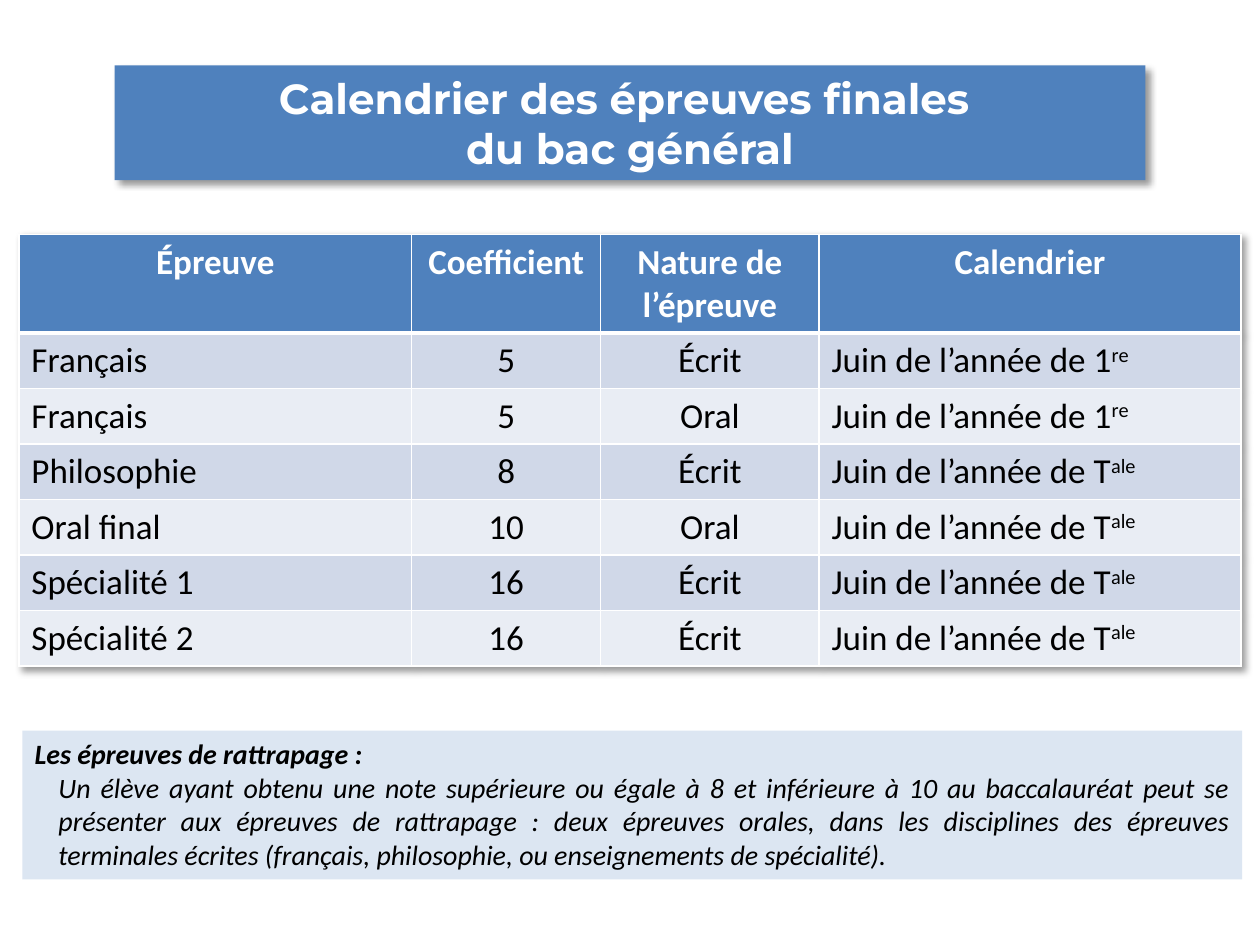
"""Build the slide on the final exams of the general baccalaureate."""
import pptx
import pptx.dml.color
import pptx.enum.text
import pptx.oxml
import pptx.oxml.ns
import pptx.util

Cm = pptx.util.Cm
Pt = pptx.util.Pt
ALIGN = pptx.enum.text.PP_ALIGN

THEME = {
    "blue": "4F81BD", "bands": ("D0D8E8", "E9EDF4"), "pale": "DCE6F2",
    "white": "FFFFFF", "black": "000000",
    "head": "Montserrat", "body": "Calibri",
    "title": 24, "cell": 20, "note": 16,
}
TITLE = "Calendrier des épreuves finales \ndu bac général"
HEADS = ("Épreuve", "Coefficient", "Nature de l’épreuve", "Calendrier")
EXAMS = (
    ("Français", "5", "Écrit", "1", "re"),
    ("Français", "5", "Oral", "1", "re"),
    ("Philosophie", "8", "Écrit", "T", "ale"),
    ("Oral final", "10", "Oral", "T", "ale"),
    ("Spécialité 1", "16", "Écrit", "T", "ale"),
    ("Spécialité 2", "16", "Écrit", "T", "ale"),
)
DATE = "Juin de l’année de "
WIDTHS = (7.92, 3.81, 4.4, 8.51)
HEAD_H, ROW_H = 1.92, 1.1
NOTE = (
    "Les épreuves de rattrapage :",
    "Un élève ayant obtenu une note supérieure ou égale à 8 et inférieure à 10 "
    "au baccalauréat peut se présenter aux épreuves de rattrapage : deux épreuves "
    "orales, dans les disciplines des épreuves terminales écrites (français, "
    "philosophie, ou enseignements de spécialité).",
)


def rgb(name):
    return pptx.dml.color.RGBColor.from_string(name)


def paint(item, color):
    item.fill.solid()
    item.fill.fore_color.rgb = rgb(color)


def style(para, face, size, color, align, bold=False, slant=False):
    para.alignment = align
    for run in para.runs:
        font = run.font
        font.name, font.size = face, Pt(size)
        font.bold, font.italic = bold, slant
        font.color.rgb = rgb(color)


def shadow():
    return pptx.oxml.parse_xml(
        f'<a:effectLst {pptx.oxml.ns.nsdecls("a")}>'
        f'<a:outerShdw blurRad="{Pt(4)}" dist="{Pt(3)}" dir="2700000" '
        f'algn="tl" rotWithShape="0"><a:srgbClr val="{THEME["black"]}">'
        '<a:alpha val="40000"/></a:srgbClr></a:outerShdw></a:effectLst>')


def edge(cell, top, bottom):
    sides = (("L", 1), ("R", 1), ("T", top), ("B", bottom))
    props = cell._tc.get_or_add_tcPr()
    for spot, (side, width) in enumerate(sides):
        props.insert(spot, pptx.oxml.parse_xml(
            f'<a:ln{side} {pptx.oxml.ns.nsdecls("a")} w="{Pt(width)}">'
            f'<a:solidFill><a:srgbClr val="{THEME["white"]}"/></a:solidFill>'
            f'</a:ln{side}>'))


def add_title(slide):
    title = slide.shapes.title
    title.left, title.top, title.width, title.height = map(Cm, (2.31, 1.32, 20.78, 2.31))
    paint(title, THEME["blue"])
    title._element.spPr.append(shadow())
    frame = title.text_frame
    frame.text = TITLE
    frame.auto_size = pptx.enum.text.MSO_AUTO_SIZE.NONE
    for para in frame.paragraphs:
        style(para, THEME["head"], THEME["title"], THEME["white"], ALIGN.CENTER, True)


def add_grid(slide):
    height = HEAD_H + ROW_H * len(EXAMS)
    grid = slide.shapes.add_table(
        len(EXAMS) + 1, len(HEADS), Cm(0.38), Cm(4.73), Cm(sum(WIDTHS)), Cm(height)).table
    grid._tbl.tblPr.insert(0, shadow())
    for col, width in zip(grid.columns, WIDTHS):
        col.width = Cm(width)
    rows = [HEADS] + [(*exam[:3], DATE + exam[3]) for exam in EXAMS]
    for r, row in enumerate(rows):
        head = r == 0
        grid.rows[r].height = Cm(HEAD_H if head else ROW_H)
        for c, text in enumerate(row):
            cell = grid.cell(r, c)
            cell.text = text
            para = cell.text_frame.paragraphs[0]
            if not head and c == 3:
                run = para.add_run()
                run.text = EXAMS[r - 1][4]
                run._r.get_or_add_rPr().set("baseline", "30000")
            style(para, THEME["body"], THEME["cell"],
                  THEME["white" if head else "black"],
                  ALIGN.CENTER if head or c in (1, 2) else ALIGN.LEFT, head)
            paint(cell, THEME["blue"] if head else THEME["bands"][(r - 1) % 2])
            edge(cell, 3 if r == 1 else 1, 3 if head else 1)


def add_note(slide):
    box = slide.shapes.add_textbox(Cm(0.45), Cm(14.73), Cm(24.59), Cm(3))
    paint(box, THEME["pale"])
    frame = box.text_frame
    frame.word_wrap = True
    frame.text = "\n".join(NOTE)
    for level, para in enumerate(frame.paragraphs):
        style(para, THEME["body"], THEME["note"], THEME["black"],
              ALIGN.JUSTIFY, level == 0, True)
        para.level = level
        props = para._p.get_or_add_pPr()
        props.set("marL", str(Cm(0.48) * level))
        props.set("indent", "0")


def main():
    deck = pptx.Presentation()
    deck.slide_width, deck.slide_height = Cm(25.4), Cm(19.05)
    slide = deck.slides.add_slide(deck.slide_layouts.get_by_name("Title Only"))
    add_title(slide)
    add_grid(slide)
    add_note(slide)
    deck.save("out.pptx")


if __name__ == "__main__":
    main()
